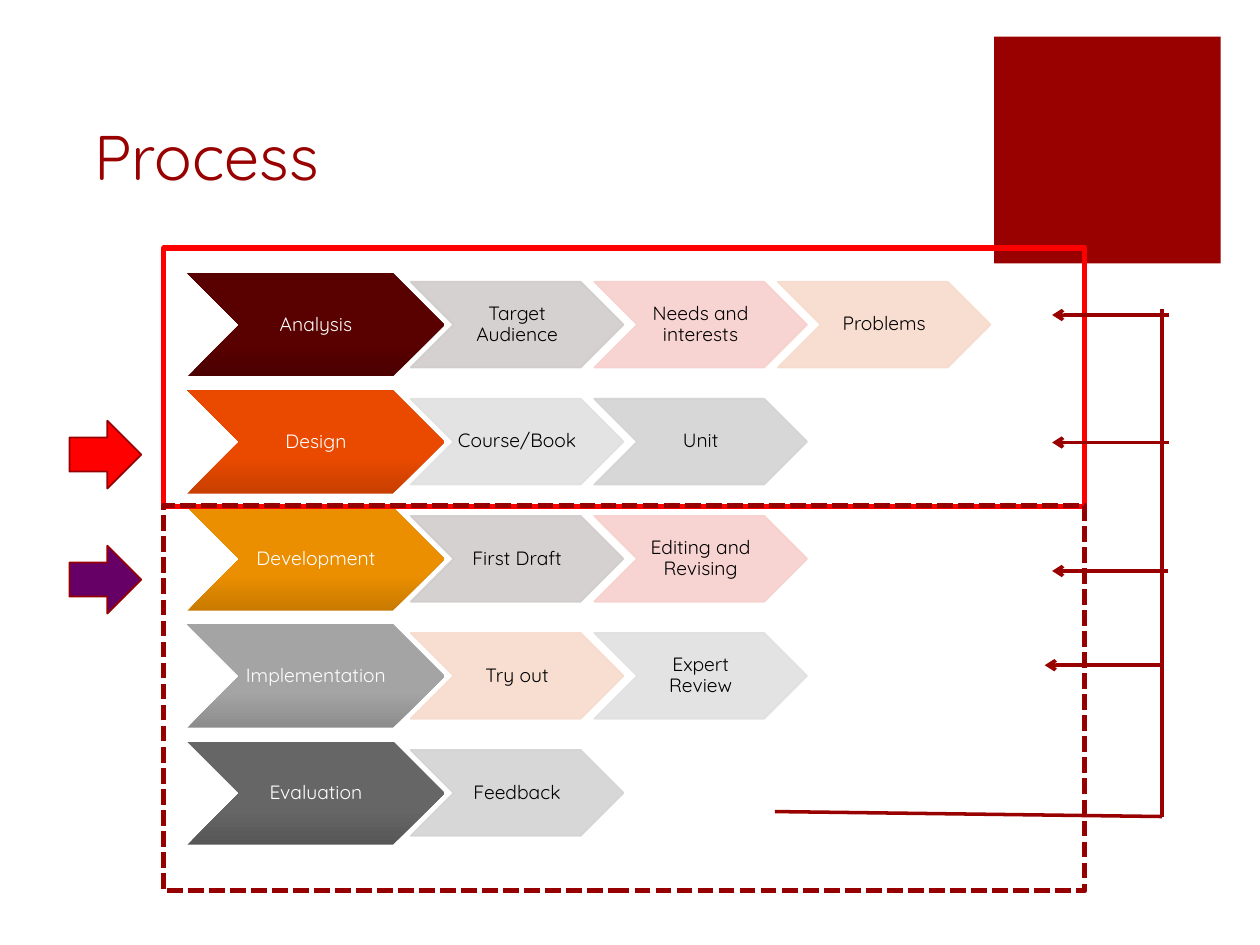
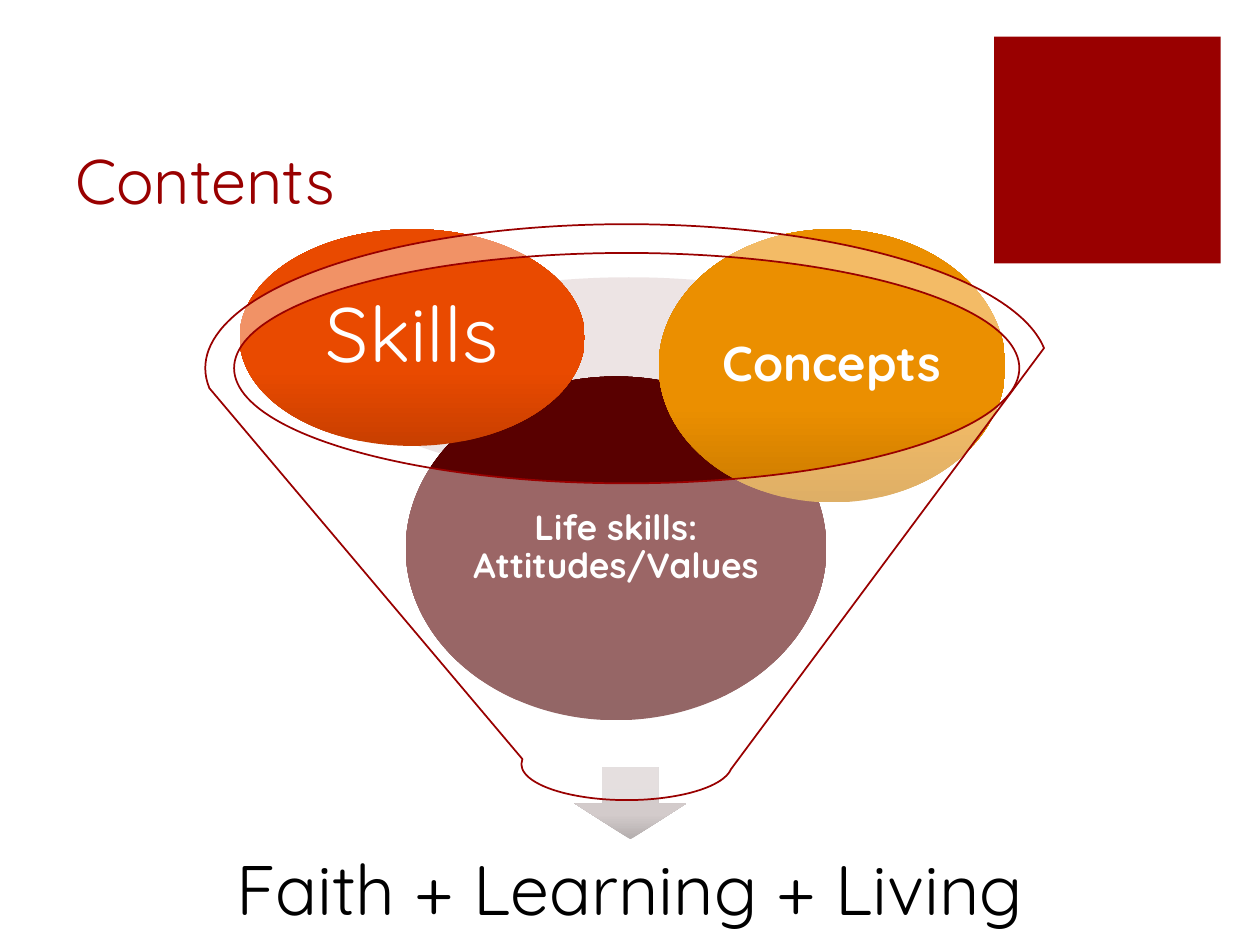
from copy import deepcopy

from lxml.etree import SubElement
from pptx import Presentation
from pptx.dml.color import RGBColor
from pptx.enum.dml import MSO_LINE
from pptx.enum.shapes import MSO_CONNECTOR, MSO_SHAPE
from pptx.enum.text import MSO_ANCHOR, PP_ALIGN
from pptx.oxml.ns import qn
from pptx.util import Cm, Pt

FONT = "Quicksand"
RED, DARK_RED, BRIGHT_RED = "990000", "960000", "FF0000"
WHITE, BLACK, PURPLE = "FFFFFF", "000000", "660066"
GREY_ROSE, PINK, PEACH = "D1CCCC", "F7D0CC", "F7DBCC"
PALE_GREY, MID_GREY = "E0E0E0", "D3D3D3"

# Gradients run from the bottom edge up
STOPS = (0, 0.35, 0.7, 1)
MAROON = ("4C0000",) + ("590000",) * 3
ORANGE = ("C83F00",) + ("E94A00",) * 3
AMBER = ("C97A00",) + ("EB8F00",) * 3
SILVER = ("8C8C8C",) + ("A4A4A4",) * 3
CHARCOAL = ("575757",) + ("666666",) * 3
ARROW_GREY = ("B4AEAE", "D3CBCB", "D4CACA", "D5C8C8")


def color(hex_text):
    return RGBColor.from_string(hex_text)


def set_alpha(parent, percent):
    for node in parent.iter(qn("a:srgbClr")):
        SubElement(node, qn("a:alpha")).set("val", str(percent * 1000))


def write(frame, text, size=11, ink=BLACK, bold=False, align=PP_ALIGN.CENTER,
          anchor=MSO_ANCHOR.MIDDLE, inset=0.03, spacing=0.9):
    frame.word_wrap = True
    frame.vertical_anchor = anchor
    frame.margin_left = frame.margin_right = Cm(inset)
    frame.margin_top = frame.margin_bottom = Cm(inset)
    para = frame.paragraphs[0]
    para.alignment, para.line_spacing = align, spacing
    span = para.add_run()
    span.text = text
    span.font.name, span.font.size, span.font.bold = FONT, Pt(size), bold
    span.font.color.rgb = color(ink)


class SlideBuilder:
    def __init__(self, deck):
        self.deck = deck
        self.page = None

    def start(self, title, left, top):
        """New slide with its title and the corner square."""
        self.page = self.deck.slides.add_slide(self.deck.slide_layouts[5])
        holder = self.page.shapes.title
        holder.left, holder.top = Cm(left), Cm(top)
        holder.width, holder.height = Cm(18.08), Cm(3.18)
        write(holder.text_frame, title, size=36, ink=RED, align=PP_ALIGN.LEFT,
              anchor=MSO_ANCHOR.BOTTOM, inset=0.25, spacing=1)
        self.shape(MSO_SHAPE.RECTANGLE, 20.04, 0.74, 4.57, 4.57, fill=RED)

    def shape(self, kind, left, top, width, height, fill=None, alpha=None,
              line=None, weight=1, dash=None, line_alpha=None):
        shape = self.page.shapes.add_shape(
            kind, Cm(left), Cm(top), Cm(width), Cm(height))
        shape.shadow.inherit = False
        if fill is None:
            shape.fill.background()
        elif isinstance(fill, tuple):
            self.gradient(shape, fill)
        else:
            shape.fill.solid()
            shape.fill.fore_color.rgb = color(fill)
        if alpha:
            set_alpha(shape._element.spPr, alpha)
        if line is None:
            shape.line.fill.background()
            return shape
        shape.line.color.rgb = color(line)
        shape.line.width = Pt(weight)
        if dash:
            shape.line.dash_style = dash
        if line_alpha:
            set_alpha(shape._element.spPr.find(qn("a:ln")), line_alpha)
        return shape

    def gradient(self, shape, colors):
        shape.fill.gradient()
        shape.fill.gradient_angle = 90
        stop_list = next(shape._element.spPr.iter(qn("a:gsLst")))
        while len(stop_list) < len(colors):
            stop_list.append(deepcopy(stop_list[-1]))
        for stop, place, shade in zip(shape.fill.gradient_stops, STOPS, colors):
            stop.position = place
            stop.color.rgb = color(shade)

    def line(self, start, end, arrow=False):
        connector = self.page.shapes.add_connector(
            MSO_CONNECTOR.STRAIGHT, *(Cm(value) for value in start + end))
        connector.line.color.rgb = color(RED)
        connector.line.width = Pt(2)
        properties = connector._element.spPr
        if arrow:
            SubElement(properties.find(qn("a:ln")), qn("a:tailEnd")).set("type", "arrow")
        SubElement(properties, qn("a:effectLst"))

    def text(self, text, left, top, width, height, **style):
        box = self.page.shapes.add_textbox(
            Cm(left), Cm(top), Cm(width), Cm(height))
        write(box.text_frame, text, **style)


def build_process(builder):
    builder.start("Process", 1.65, 0.97)

    # Chevron rows: each phase followed by its steps
    rows = [
        ("Analysis", MAROON, [("Target Audience", GREY_ROSE),
                              ("Needs and interests", PINK), ("Problems", PEACH)]),
        ("Design", ORANGE, [("Course/Book", PALE_GREY), ("Unit", MID_GREY)]),
        ("Development", AMBER, [("First Draft", GREY_ROSE),
                                ("Editing and Revising", PINK)]),
        ("Implementation", SILVER, [("Try out", PEACH),
                                    ("Expert Review", PALE_GREY)]),
        ("Evaluation", CHARCOAL, [("Feedback", MID_GREY)]),
    ]
    for row, (phase, shades, steps) in enumerate(rows):
        top = 5.51 + row * 2.36
        chevron = builder.shape(MSO_SHAPE.CHEVRON, 3.78, top, 5.18, 2.08, fill=shades)
        write(chevron.text_frame, phase, ink=WHITE)
        for column, (step, shade) in enumerate(steps):
            chevron = builder.shape(
                MSO_SHAPE.CHEVRON, 8.28 + column * 3.7, top + 0.17, 4.29, 1.73,
                fill=shade, alpha=90, line=shade, line_alpha=90)
            write(chevron.text_frame, step)

    # Frames around the two stages and their pointers
    builder.shape(MSO_SHAPE.RIGHT_ARROW, 1.4, 8.48, 1.45, 1.37,
                  fill=BRIGHT_RED, line=DARK_RED)
    builder.shape(MSO_SHAPE.RECTANGLE, 3.3, 5, 18.57, 5.21,
                  line=BRIGHT_RED, weight=3)
    builder.shape(MSO_SHAPE.RECTANGLE, 3.3, 10.19, 18.57, 7.77,
                  line=DARK_RED, weight=3, dash=MSO_LINE.SQUARE_DOT)
    builder.shape(MSO_SHAPE.RIGHT_ARROW, 1.4, 11, 1.45, 1.37,
                  fill=PURPLE, line=DARK_RED)

    # Feedback loop back to the earlier phases
    builder.line((15.62, 16.36), (23.42, 16.46))
    builder.line((23.42, 16.46), (23.42, 6.22))
    for start, end, height in [(23.42, 21.06, 13.41), (23.55, 21.21, 11.51),
                               (23.57, 21.21, 8.92), (23.57, 21.21, 6.35)]:
        builder.line((start, height), (end, height), arrow=True)


def build_contents(builder):
    builder.start("Contents", 1.27, 1.45)

    # Funnel mouth, outflow and result
    builder.shape(MSO_SHAPE.OVAL, 6.86, 5.59, 11.63, 4.04, fill="D4BDBD", alpha=40)
    builder.shape(MSO_SHAPE.DOWN_ARROW, 11.58, 15.47, 2.26, 1.45, fill=ARROW_GREY)
    builder.text("Faith + Learning + Living", 3.3, 16.64, 18.8, 2.72,
                 size=40, inset=0.79)

    # Ingredients
    ingredients = [
        ("Life skills: Attitudes/Values", MAROON, (8.18, 7.59, 8.48, 6.93), 20, True),
        ("Skills", ORANGE, (4.83, 4.62, 6.96, 4.37), 44, False),
        ("Concepts", AMBER, (13.28, 4.62, 6.99, 5.51), 28, True),
    ]
    for label, shades, place, size, bold in ingredients:
        oval = builder.shape(MSO_SHAPE.OVAL, *place, fill=shades)
        write(oval.text_frame, label, size=size, ink=WHITE, bold=bold, inset=0.1)

    # Funnel in front
    builder.shape(MSO_SHAPE.FUNNEL, 4.14, 4.52, 16.99, 11.61,
                  fill=WHITE, alpha=40, line=RED)


def main():
    deck = Presentation()
    deck.slide_width, deck.slide_height = Cm(25.4), Cm(19.05)
    builder = SlideBuilder(deck)
    build_process(builder)
    build_contents(builder)
    deck.save("out.pptx")


if __name__ == "__main__":
    main()
